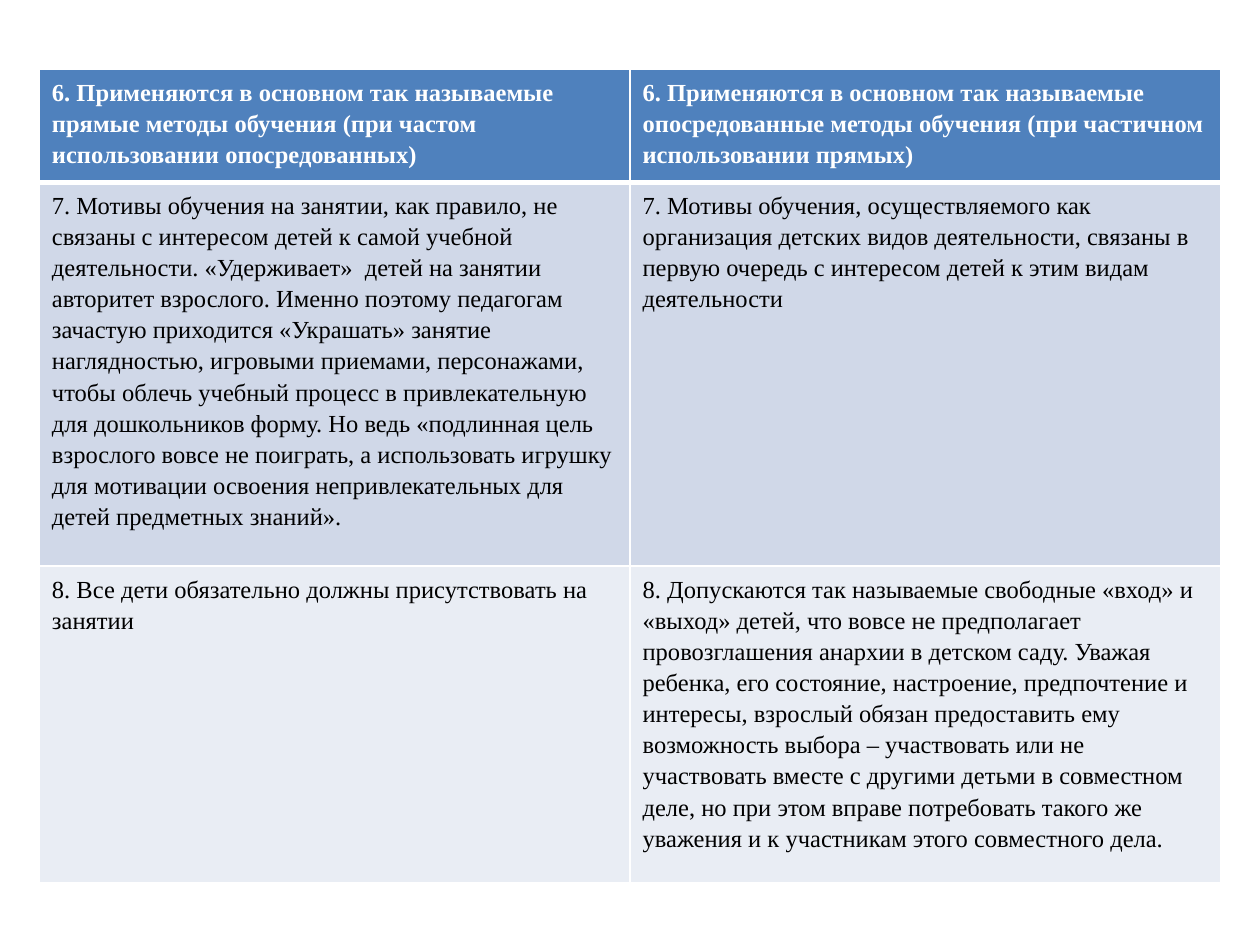
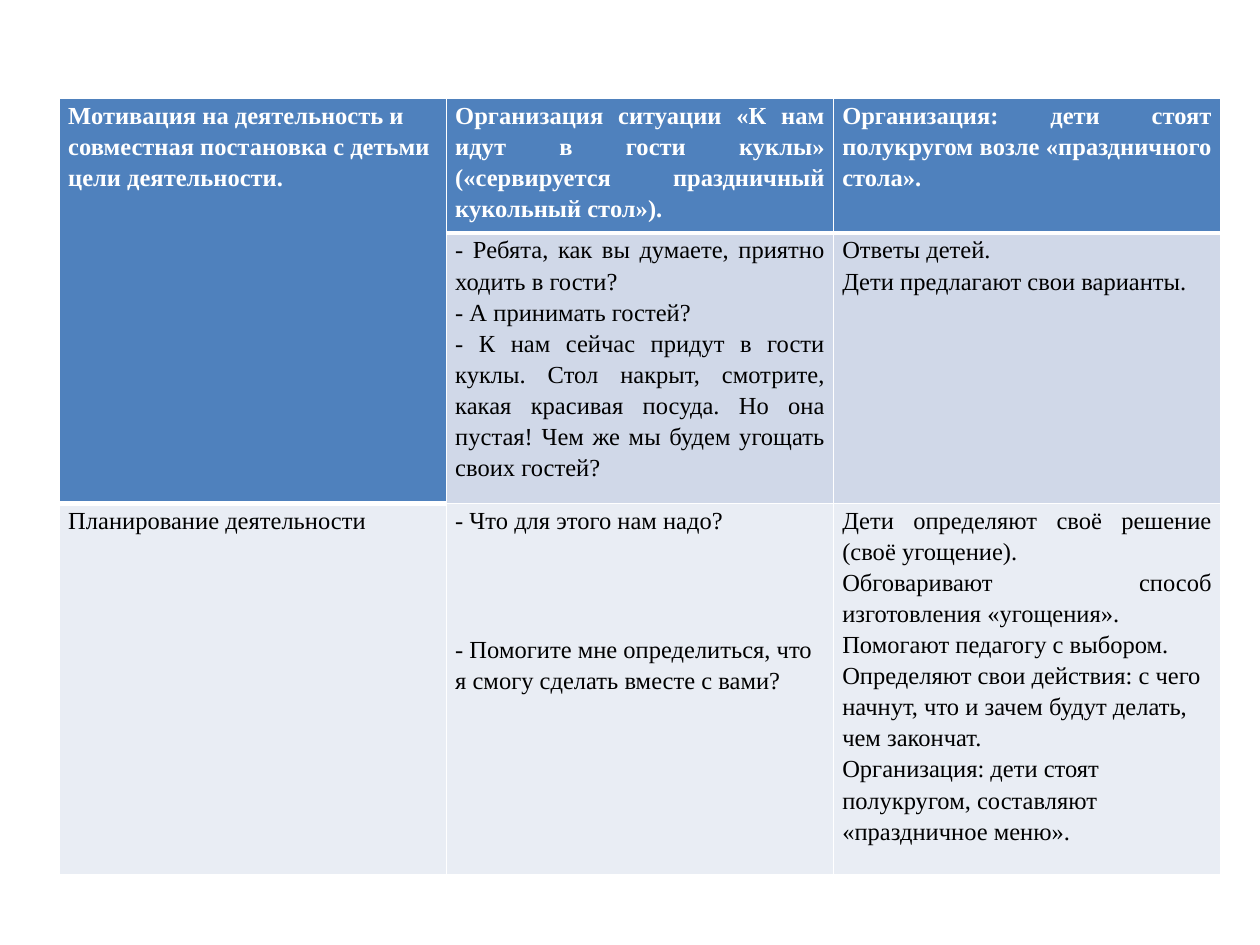
from lxml import etree
from pptx import Presentation
from pptx.dml.color import RGBColor
from pptx.enum.text import PP_ALIGN
from pptx.oxml.ns import qn
from pptx.util import Pt

LEFT, JUST = PP_ALIGN.LEFT, PP_ALIGN.JUSTIFY
FONT, SIZE, SPACE = "Times New Roman", 14, 1.15
COLORS = {"head": "4F81BD", "odd": "D0D8E8", "even": "E9EDF4",
          "light": "FFFFFF", "dark": "000000"}
FILLS = ["head", "odd", "even"]
THIN, THICK = 1, 3


def left(text, gap=0):
    """Describe a left-aligned paragraph with a gap above it."""
    return text, LEFT, gap


def just(text):
    """Describe a justified paragraph."""
    return text, JUST, 0


METHODS = [
    [[left("6. Применяются в основном так называемые прямые методы обучения "
           "(при частом использовании опосредованных)")],
     [left("6. Применяются в основном так называемые опосредованные методы "
           "обучения (при частичном использовании прямых)")]],
    [[left("7. Мотивы обучения на занятии, как правило, не связаны с интересом "
           "детей к самой учебной деятельности. «Удерживает»  детей на занятии "
           "авторитет взрослого. Именно поэтому педагогам зачастую приходится "
           "«Украшать» занятие наглядностью, игровыми приемами, персонажами, "
           "чтобы облечь учебный процесс в привлекательную для дошкольников "
           "форму. Но ведь «подлинная цель взрослого вовсе не поиграть, а "
           "использовать игрушку для мотивации освоения непривлекательных для "
           "детей предметных знаний».")],
     [left("7. Мотивы обучения, осуществляемого как организация детских видов "
           "деятельности, связаны в первую очередь с интересом детей к этим "
           "видам деятельности")]],
    [[left("8. Все дети обязательно должны присутствовать на занятии")],
     [left("8. Допускаются так называемые свободные «вход» и «выход» детей, что "
           "вовсе не предполагает провозглашения анархии в детском саду. Уважая "
           "ребенка, его состояние, настроение, предпочтение и интересы, "
           "взрослый обязан предоставить ему возможность выбора – участвовать "
           "или не участвовать вместе с другими детьми в совместном деле, но "
           "при этом вправе потребовать такого же уважения и к участникам этого "
           "совместного дела.")]],
]

STAGES = [
    [[left("Мотивация на деятельность и совместная постановка с детьми цели "
           "деятельности.")],
     [just("Организация ситуации «К нам идут в гости куклы» («сервируется "
           "праздничный кукольный стол»).")],
     [just("Организация: дети стоят полукругом возле «праздничного стола».")]],
    [None,
     [just("- Ребята, как вы думаете, приятно ходить в гости?"),
      just("- А принимать гостей?"),
      just("- К нам сейчас придут в гости куклы. Стол накрыт, смотрите, какая "
           "красивая посуда. Но она пустая! Чем же мы будем угощать своих "
           "гостей?")],
     [just("Ответы детей."),
      left("Дети предлагают свои варианты.")]],
    [[just("Планирование деятельности")],
     [just("- Что для этого нам надо?"),
      left("- Помогите мне определиться, что я смогу сделать вместе с вами?",
           gap=56)],
     [just("Дети определяют своё решение (своё угощение)."),
      just("Обговаривают способ изготовления «угощения»."),
      left("Помогают педагогу с выбором."),
      left("Определяют свои действия: с чего начнут, что и зачем будут делать, "
           "чем закончат."),
      left("Организация: дети стоят полукругом, составляют «праздничное "
           "меню».")]],
]


def color(name):
    """Look up a named colour."""
    return RGBColor.from_string(COLORS[name])


def add_edges(cell, top, bottom):
    """Draw white borders around a cell."""
    props = cell._tc.get_or_add_tcPr()
    for side, width in zip("LRTB", (THIN, THIN, top, bottom)):
        line = etree.SubElement(props, qn(f"a:ln{side}"), w=str(Pt(width)))
        fill = etree.SubElement(line, qn("a:solidFill"))
        etree.SubElement(fill, qn("a:srgbClr"), val=COLORS["light"])


def add_text(frame, paras, head):
    """Fill a text frame with paragraphs."""
    for num, (text, align, gap) in enumerate(paras):
        para = frame.add_paragraph() if num else frame.paragraphs[0]
        para.text = text
        para.alignment = align
        para.line_spacing = SPACE
        para.space_before = Pt(gap)
        para.font.name = FONT
        para.font.size = Pt(SIZE)
        para.font.bold = head
        para.font.color.rgb = color("light" if head else "dark")


def add_grid(deck, rows, place, heights, inset):
    """Add a slide with a table; None joins a cell to the one above."""
    slide = deck.slides.add_slide(deck.slide_layouts[6])
    x, y, width = place
    count = len(rows[0])
    table = slide.shapes.add_table(len(rows), count, Pt(x), Pt(y), Pt(width),
                                   Pt(sum(heights))).table
    for col in table.columns:
        col.width = Pt(width / count)
    for r, row in enumerate(rows):
        table.rows[r].height = Pt(heights[r])
        for c, paras in enumerate(row):
            cell = table.cell(r, c)
            head = r == 0 or paras is None
            above = r > 0 and (r == 1 or rows[r - 1][c] is None)
            last = head and (r + 1 == len(rows) or rows[r + 1][c] is not None)
            add_edges(cell, THICK if above and not head else THIN,
                      THICK if last or r == 0 else THIN)
            cell.fill.solid()
            cell.fill.fore_color.rgb = color("head" if head else FILLS[r])
            cell.margin_left = cell.margin_right = Pt(inset[0])
            cell.margin_top = cell.margin_bottom = Pt(inset[1])
            if paras is None:
                table.cell(r - 1, c).merge(cell)
            else:
                add_text(cell.text_frame, paras, head)


def main():
    """Build the two slides."""
    deck = Presentation()
    deck.slide_width, deck.slide_height = Pt(720), Pt(540)
    add_grid(deck, METHODS, (22.5, 39.6, 675), (64.6, 219.4, 180.8), (7.2, 3.6))
    add_grid(deck, STAGES, (34, 56.2, 663.5), (77, 154.4, 212.4), (5, 0))
    deck.save("out.pptx")


if __name__ == "__main__":
    main()
